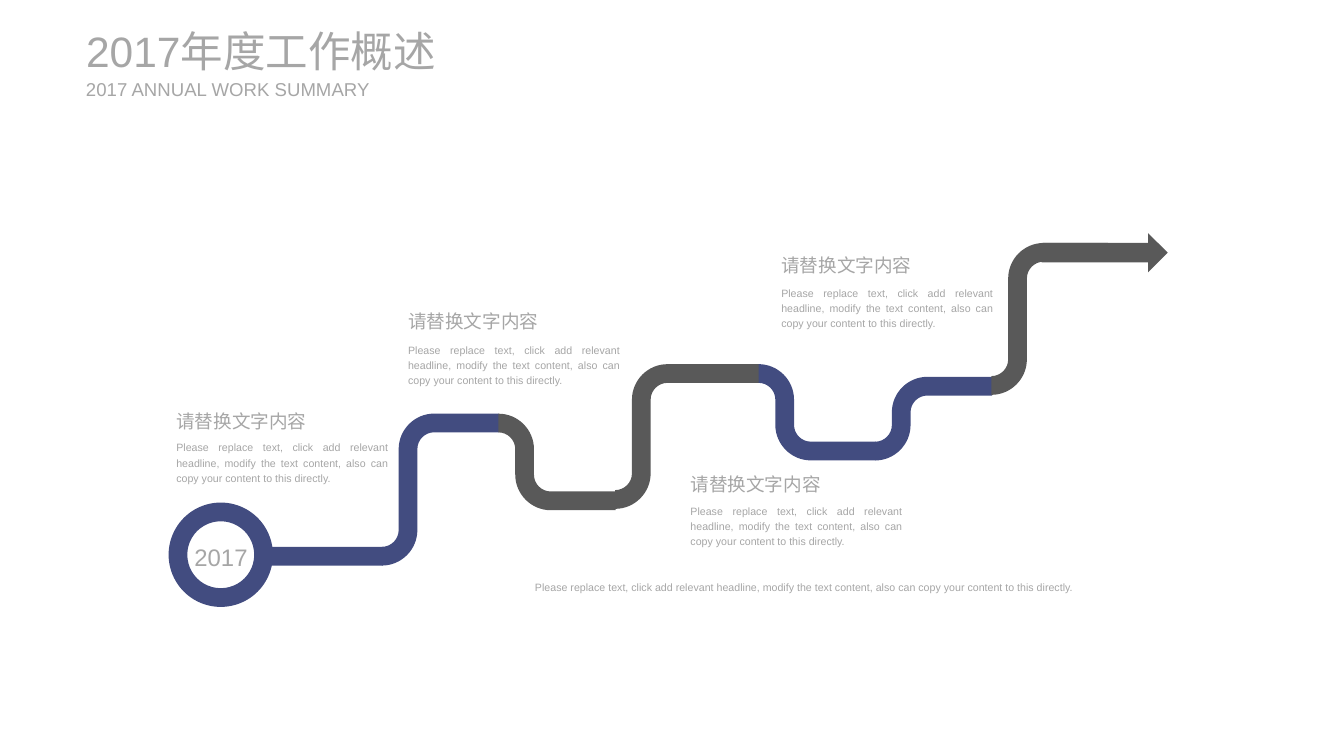
import lxml.etree
import pptx
import pptx.dml.color
import pptx.enum.shapes
import pptx.enum.text
import pptx.oxml.ns
import pptx.util

Pt = pptx.util.Pt
qn = pptx.oxml.ns.qn
SHAPES = pptx.enum.shapes.MSO_SHAPE
ALIGN = pptx.enum.text.PP_ALIGN
ANCHOR = pptx.enum.text.MSO_ANCHOR

NAVY, GREY, TEXT = "424C80", "595959", "A6A6A6"
FONT = "Arial"
TITLE = "2017年度工作概述"
SUBTITLE = "2017 ANNUAL WORK SUMMARY"
YEAR = "2017"
HEADING = "请替换文字内容"
BODY = ("Please replace text, click add relevant headline, modify the text content, "
        "also can copy your content to this directly.")

# Left, heading top, heading width, body top
MILESTONES = [
    (307.4, 230.4, 131.8, 257.0),
    (520.1, 352.8, 137.5, 378.0),
    (588.5, 187.9, 141.8, 213.8),
    (132.8, 305.3, 126.0, 330.5),
]
# Start x, start y, end x, end y of each bend's centre line
BENDS = [
    (463.4, 376.3, 571.8, 281.4, GREY),
    (659.2, 339.8, 747.4, 290.9, NAVY),
    (571.4, 281.4, 659.6, 339.8, NAVY),
    (287.7, 419.0, 375.9, 318.6, NAVY),
    (375.5, 318.7, 463.7, 377.3, GREY),
    (746.8, 290.4, 834.6, 190.1, GREY),
]
ROAD_WIDTH = 14.1
BEND_RADIUS = 19.7
UNITS_PER_POINT = 100
CURVE_PULL = 0.55
RING_SIZE = 78.6


def color(hex_text):
    return pptx.dml.color.RGBColor.from_string(hex_text)


def paint(shape, fill):
    shape.shadow.inherit = False
    shape.fill.solid()
    shape.fill.fore_color.rgb = color(fill)
    shape.line.fill.background()


def add_preset(page, kind, left, top, width, height, fill):
    shape = page.shapes.add_shape(kind, Pt(left), Pt(top), Pt(width), Pt(height))
    paint(shape, fill)
    return shape


def add_text(page, text, left, top, width, height, size,
             align=ALIGN.LEFT, anchor=ANCHOR.TOP, spacing=1.2):
    box = page.shapes.add_textbox(Pt(left), Pt(top), Pt(width), Pt(height))
    frame = box.text_frame
    frame.margin_left = frame.margin_right = frame.margin_top = frame.margin_bottom = 0
    frame.word_wrap = True
    frame.auto_size = pptx.enum.text.MSO_AUTO_SIZE.SHAPE_TO_FIT_TEXT
    frame.vertical_anchor = anchor
    frame.text = text
    para = frame.paragraphs[0]
    para.alignment = align
    para.line_spacing = spacing
    font = para.runs[0].font
    font.name, font.size = FONT, Pt(size)
    font.color.rgb = color(TEXT)


def bend_edge(x0, y0, x1, y1, offset):
    """Corner points of one edge: a quarter turn, a riser, a quarter turn back, a straight."""
    way = 1 if y1 > y0 else -1
    riser = x0 + BEND_RADIUS + offset
    start, end = y0 - way * offset, y1 - way * offset
    return [(x0, start), (riser, y0 + way * BEND_RADIUS),
            (riser, y1 - way * BEND_RADIUS), (x0 + 2 * BEND_RADIUS, end), (x1, end)]


def round_turns(shape):
    """Turn the slanted sides of a bend's outline into quarter curves."""
    outline = shape._element.find(".//" + qn("a:path"))
    x, y = 0, 0
    for index, side in enumerate(outline.findall("*")[:-1]):
        point = side.find(qn("a:pt"))
        next_x, next_y = int(point.get("x")), int(point.get("y"))
        if index in (1, 3, 7, 9):
            corner_x, corner_y = (next_x, y) if index in (1, 7) else (x, next_y)
            side.tag = qn("a:cubicBezTo")
            for place, (from_x, from_y) in enumerate([(x, y), (next_x, next_y)]):
                control = lxml.etree.Element(qn("a:pt"))
                control.set("x", str(round(from_x + CURVE_PULL * (corner_x - from_x))))
                control.set("y", str(round(from_y + CURVE_PULL * (corner_y - from_y))))
                side.insert(place, control)
        x, y = next_x, next_y


def add_bend(page, x0, y0, x1, y1, fill):
    half = ROAD_WIDTH / 2
    outline = bend_edge(x0, y0, x1, y1, half) + bend_edge(x0, y0, x1, y1, -half)[::-1]
    points = [(x * UNITS_PER_POINT, y * UNITS_PER_POINT) for x, y in outline]
    builder = page.shapes.build_freeform(*points[0], scale=Pt(1) / UNITS_PER_POINT)
    builder.add_line_segments(points[1:], close=True)
    shape = builder.convert_to_shape()
    round_turns(shape)
    paint(shape, fill)


def main():
    deck = pptx.Presentation()
    deck.slide_width, deck.slide_height = Pt(1012.4), Pt(569.5)
    page = deck.slides.add_slide(deck.slide_layouts[6])

    for bend in BENDS:
        add_bend(page, *bend)
    ring = add_preset(page, SHAPES.DONUT, 127, 378.6, RING_SIZE, RING_SIZE, NAVY)
    ring.adjustments[0] = ROAD_WIDTH / RING_SIZE
    add_text(page, YEAR, 133.7, 404.2, 65.5, 25.9, 18, ALIGN.CENTER)
    add_preset(page, SHAPES.RECTANGLE, 204.5, 412, 83.8, ROAD_WIDTH, NAVY)
    add_preset(page, SHAPES.RIGHT_ARROW, 784.6, 175.6, 95, 29.5, GREY)

    add_text(page, BODY, 403, 436, 486.7, 11, 8, ALIGN.JUSTIFY)
    for left, heading_top, heading_width, body_top in MILESTONES:
        add_text(page, HEADING, left, heading_top, heading_width, 20.2, 14)
        add_text(page, BODY, left, body_top, 159.8, 34.6, 8, ALIGN.JUSTIFY, ANCHOR.MIDDLE)

    add_text(page, TITLE, 64.8, 18.7, 311, 38.9, 32, anchor=ANCHOR.MIDDLE, spacing=1.0)
    add_text(page, SUBTITLE, 64.8, 58.3, 221, 17.3, 14, anchor=ANCHOR.MIDDLE, spacing=1.0)
    deck.save("out.pptx")


if __name__ == "__main__":
    main()
